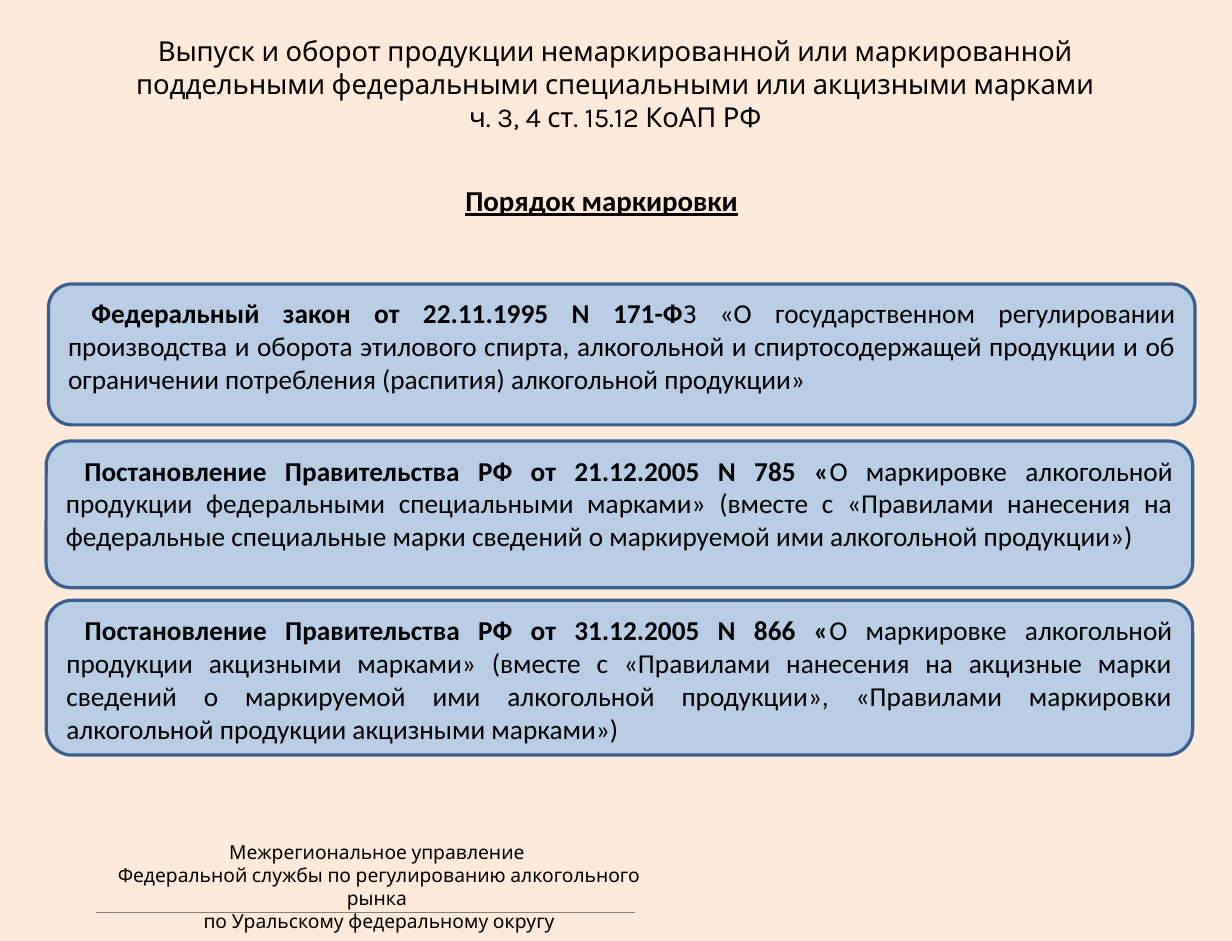
from dataclasses import dataclass

from lxml import etree
from pptx import Presentation
from pptx import util as u
from pptx.dml.color import RGBColor
from pptx.enum import shapes, text
from pptx.oxml.ns import qn

BACKGROUND, CARD_FILL, CARD_LINE = "FDEADA", "B9CDE5", "3A5F8C"
BLACK, GREY = "000000", "808080"
CARD_WIDTH = 9.93


@dataclass
class Act:
    left: float
    top: float
    height: float
    name: str
    subject: str


ACTS = [
    Act(0.42, 2.46, 1.22, " Федеральный закон от 22.11.1995 N 171-Ф",
        "З «О государственном регулировании производства и оборота этилового спирта, "
        "алкогольной и спиртосодержащей продукции и об ограничении потребления "
        "(распития) алкогольной продукции»"),
    Act(0.4, 3.82, 1.27, " Постановление Правительства РФ от 21.12.2005 N 785 «",
        "О маркировке алкогольной продукции федеральными специальными марками» "
        "(вместе с «Правилами нанесения на федеральные специальные марки сведений "
        "о маркируемой ими алкогольной продукции»)"),
    Act(0.4, 5.2, 1.34, " Постановление Правительства РФ от 31.12.2005 N 866 «",
        "О маркировке алкогольной продукции акцизными марками» (вместе с «Правилами "
        "нанесения на акцизные марки сведений о маркируемой ими алкогольной продукции», "
        "«Правилами маркировки алкогольной продукции акцизными марками»)"),
]


def rgb(color: str) -> RGBColor:
    return RGBColor.from_string(color)


def style_font(font, size: float, name: str, bold: bool = False) -> None:
    font.size = u.Pt(size)
    font.name = name
    font.bold = bold
    font.color.rgb = rgb(BLACK)


def add_label(slide, box: tuple, content: str, size: float, name: str,
              align=text.PP_ALIGN.CENTER, bold: bool = False):
    sp = slide.shapes.add_textbox(*map(u.Inches, box))
    tf = sp.text_frame
    tf.word_wrap = True
    tf.text = content
    for p in tf.paragraphs:
        p.alignment = align
        for r in p.runs:
            style_font(r.font, size, name, bold)
    return sp


def add_act(slide, act: Act) -> None:
    """Draw a rounded card with the act's name in bold, then its subject."""
    sp = slide.shapes.add_shape(
        shapes.MSO_SHAPE.ROUNDED_RECTANGLE, u.Inches(act.left), u.Inches(act.top),
        u.Inches(CARD_WIDTH), u.Inches(act.height))
    sp.shadow.inherit = False
    sp.fill.solid()
    sp.fill.fore_color.rgb = rgb(CARD_FILL)
    sp.line.color.rgb = rgb(CARD_LINE)
    sp.line.width = u.Pt(2)
    tf = sp.text_frame
    tf.word_wrap = True
    tf.vertical_anchor = text.MSO_ANCHOR.TOP
    tf.margin_left = tf.margin_right = u.Inches(0.11)
    p = tf.paragraphs[0]
    p.alignment = text.PP_ALIGN.JUSTIFY
    for content, bold in ((act.name, True), (act.subject, False)):
        r = p.add_run()
        r.text = content
        style_font(r.font, 17, "Calibri", bold)


def add_rule(slide, left: float, right: float, y: float) -> None:
    line = slide.shapes.add_connector(
        shapes.MSO_CONNECTOR.STRAIGHT,
        u.Inches(left), u.Inches(y), u.Inches(right), u.Inches(y))
    line.line.color.rgb = rgb(GREY)
    line.line.width = u.Pt(0.75)
    etree.SubElement(line._element.spPr, qn("a:effectLst"))


def main() -> None:
    prs = Presentation()
    prs.slide_width, prs.slide_height = u.Inches(10.67), u.Inches(8.15)
    s = prs.slides.add_slide(prs.slide_layouts[6])
    s.background.fill.solid()
    s.background.fill.fore_color.rgb = rgb(BACKGROUND)

    add_label(s, (0.75, 7.23, 5.07, 0.91),
              "Межрегиональное управление \n"
              "Федеральной службы по регулированию алкогольного рынка \n"
              "по Уральскому федеральному округу", 12, "Karla")
    add_rule(s, 0.83, 5.5, 7.9)

    title = add_label(s, (0.53, 0.33, 9.6, 0.78),
                      "Выпуск и оборот продукции немаркированной или маркированной "
                      "поддельными федеральными специальными или акцизными марками\v"
                      "ч. 3, 4 ст. 15.12 КоАП РФ", 17.1, "Karla")
    title.text_frame.vertical_anchor = text.MSO_ANCHOR.MIDDLE

    for act in ACTS:
        add_act(s, act)

    heading = add_label(s, (3.92, 1.53, 3.33, 0.41), "Порядок маркировки", 18,
                        "Calibri", text.PP_ALIGN.LEFT, bold=True)
    heading.text_frame.margin_left = u.Inches(0.11)
    heading.text_frame.paragraphs[0].runs[0].font.underline = True

    prs.save("out.pptx")


if __name__ == "__main__":
    main()
